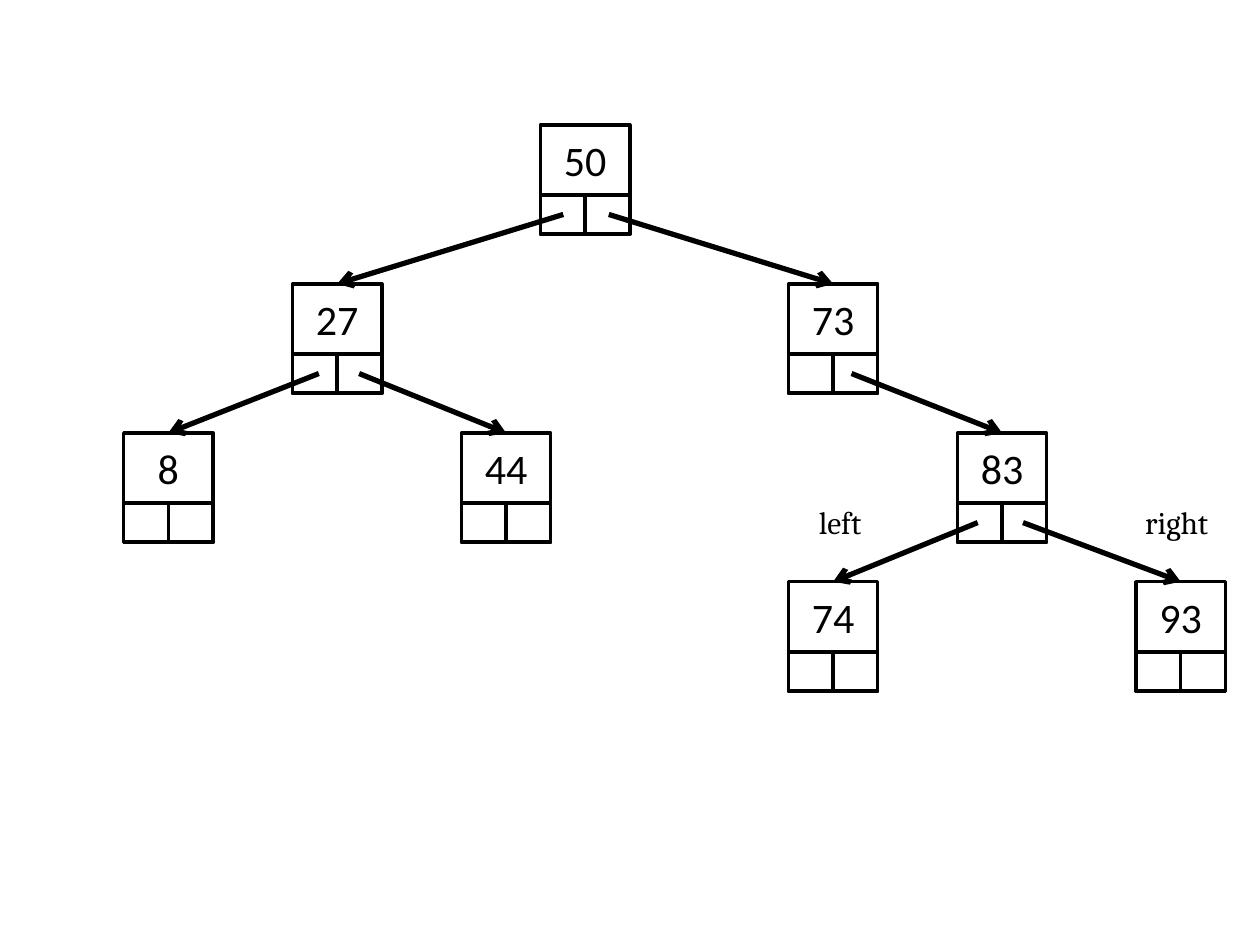
from dataclasses import dataclass

from lxml import etree
from pptx import Presentation
from pptx import util as u
from pptx.dml.color import RGBColor
from pptx.enum import shapes, text
from pptx.oxml import ns


@dataclass(frozen=True)
class Theme:
    ink: RGBColor = RGBColor(0, 0, 0)
    key_font: str = "Calibri"
    label_font: str = "Cambria"
    key_size: float = 24
    label_size: float = 18
    box_line: float = 2
    arrow_line: float = 3


NODE_WIDTH, NODE_HEIGHT = 51, 62.4
CELL_WIDTH, CELL_HEIGHT = NODE_WIDTH / 2, 22.3
LEVEL_TOPS = (71.3, 162.2, 247.4, 332.4)


class TreeSlide:
    def __init__(self, slide, theme):
        self.slide = slide
        self.theme = theme

    def add_words(self, paragraph, words, font, size):
        run = paragraph.add_run()
        run.text = words
        run.font.name = font
        run.font.size = u.Pt(size)
        run.font.color.rgb = self.theme.ink

    def box(self, left, top, width, height):
        shape = self.slide.shapes.add_shape(
            shapes.MSO_SHAPE.RECTANGLE, u.Pt(left), u.Pt(top), u.Pt(width), u.Pt(height))
        shape.shadow.inherit = False
        shape.fill.background()
        shape.line.color.rgb = self.theme.ink
        shape.line.width = u.Pt(self.theme.box_line)
        return shape

    def node(self, key, left, top):
        """A key above two pointer cells; returns the outer box."""
        outer = self.box(left, top, NODE_WIDTH, NODE_HEIGHT)
        frame = outer.text_frame
        frame.margin_top = 0
        frame.margin_bottom = u.Pt(CELL_HEIGHT)
        frame.vertical_anchor = text.MSO_ANCHOR.MIDDLE
        paragraph = frame.paragraphs[0]
        paragraph.alignment = text.PP_ALIGN.CENTER
        self.add_words(paragraph, key, self.theme.key_font, self.theme.key_size)
        for column in range(2):
            self.box(left + column * CELL_WIDTH, top + NODE_HEIGHT - CELL_HEIGHT,
                     CELL_WIDTH, CELL_HEIGHT)
        return outer

    def arrow(self, parent, child, offset):
        """An arrow from inside a pointer cell to the top of the child."""
        connector = self.slide.shapes.add_connector(
            shapes.MSO_CONNECTOR.STRAIGHT,
            parent.left + u.Pt(offset),
            parent.top + u.Pt(NODE_HEIGHT - CELL_HEIGHT / 2),
            child.left + child.width // 2, child.top)
        connector.end_connect(child, 0)
        connector.line.color.rgb = self.theme.ink
        connector.line.width = u.Pt(self.theme.arrow_line)
        properties = connector._element.spPr
        outline = properties.find(ns.qn("a:ln"))
        etree.SubElement(outline, ns.qn("a:tailEnd"), type="arrow")
        etree.SubElement(properties, ns.qn("a:effectLst"))

    def label(self, words, left, top, width, height):
        shape = self.slide.shapes.add_textbox(
            u.Pt(left), u.Pt(top), u.Pt(width), u.Pt(height))
        frame = shape.text_frame
        frame.word_wrap = False
        frame.auto_size = text.MSO_AUTO_SIZE.SHAPE_TO_FIT_TEXT
        self.add_words(frame.paragraphs[0], words,
                       self.theme.label_font, self.theme.label_size)


def main():
    presentation = Presentation()
    presentation.slide_width, presentation.slide_height = u.Pt(720), u.Pt(540)
    slide = presentation.slides.add_slide(presentation.slide_layouts[6])
    tree = TreeSlide(slide, Theme())

    # Nodes: key, left edge, level
    nodes = {
        key: tree.node(key, left, LEVEL_TOPS[level])
        for key, left, level in (
            ("50", 308.9, 0),
            ("27", 167.2, 1), ("73", 450.6, 1),
            ("8", 70.7, 2), ("44", 263.7, 2), ("83", 547.1, 2),
            ("74", 450.6, 3), ("93", 649.2, 3),
        )
    }

    # Child pointers: parent, child, start measured from the parent's left edge
    for parent, child, offset in (
        ("50", "27", 13), ("50", "73", 39),
        ("27", "8", 15), ("27", "44", 38),
        ("73", "83", 36),
        ("83", "74", 11.6), ("83", "93", 37.5),
    ):
        tree.arrow(nodes[parent], nodes[child], offset)

    # Pointer names
    tree.label("left", 460.8, 283.7, 40.5, 29)
    tree.label("right", 647.3, 283.7, 52.5, 29)

    presentation.save("out.pptx")


if __name__ == "__main__":
    main()
